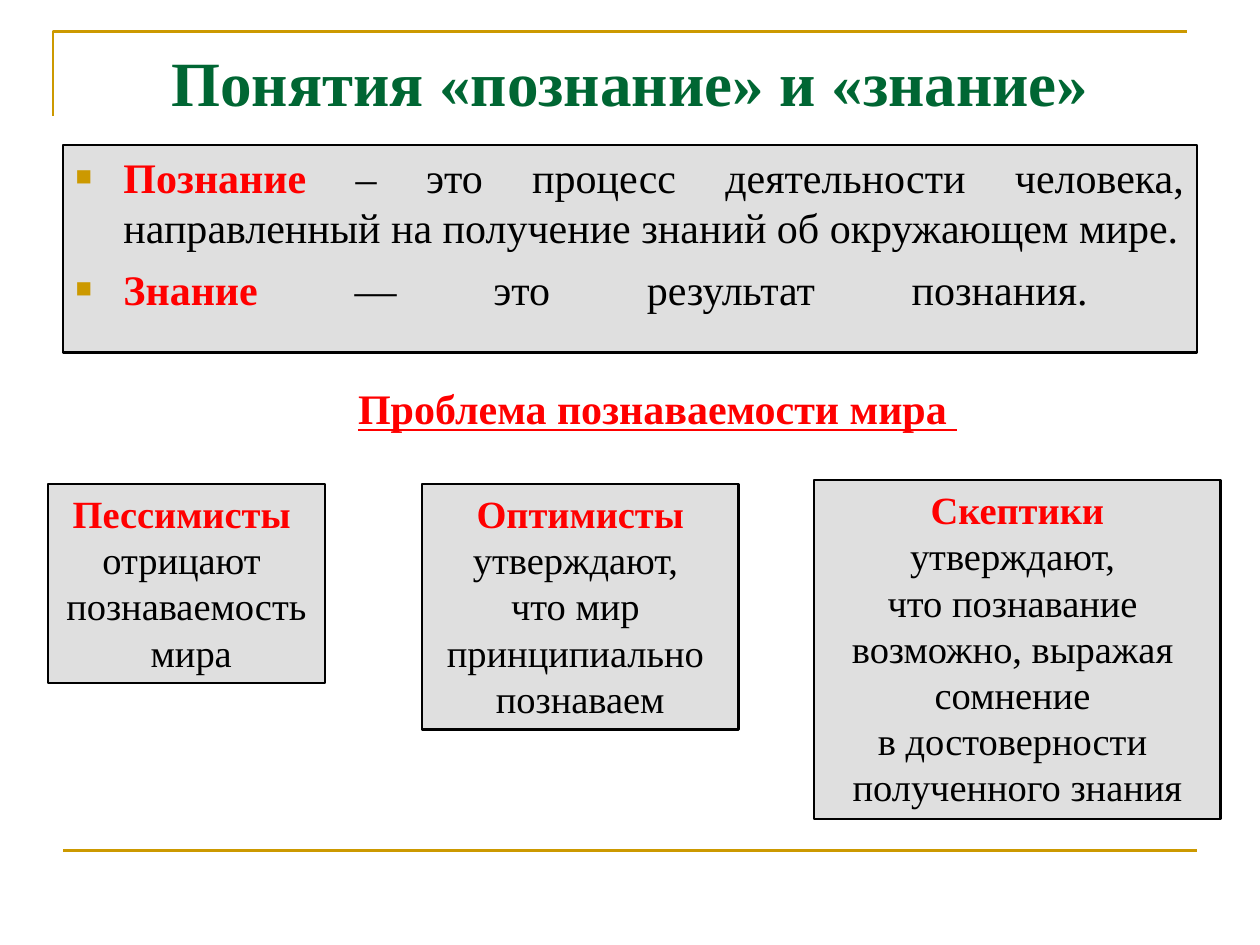
from dataclasses import dataclass

from lxml import etree
from pptx import Presentation
from pptx import util as u
from pptx.dml.color import RGBColor
from pptx.enum import shapes, text
from pptx.oxml import ns


@dataclass(frozen=True)
class Theme:
    font: str = "Times New Roman"
    gold: str = "CC9900"
    green: str = "006633"
    red: str = "FF0000"
    ink: str = "000000"
    panel: str = "DFDFDF"
    title: int = 36
    body: int = 24
    card: int = 22
    line: float = 1.5


THEME = Theme()
WIDTH, HEIGHT = 10, 7.5
MARGIN = WIDTH * 0.05
CONTENT = WIDTH - 2 * MARGIN
CARD_ROW, CARD_PADDING = 0.37, 0.1

TITLE = " Понятия «познание» и «знание» "
DEFINITIONS = [
    ("Познание", " – это процесс деятельности человека, направленный на получение знаний об окружающем мире.", False),
    ("Знание", " — это результат познания. ", True),
]
HEADING = "Проблема познаваемости мира "
CARDS = [
    (0.38, 3.84, 2.2, ["Пессимисты ", "отрицают ", "познаваемость", " мира"]),
    (3.35, 3.84, 2.51, ["Оптимисты", "утверждают, ", "что мир ", "принципиально ", "познаваем"]),
    (6.46, 3.81, 3.23, ["Скептики", "утверждают, ", "что познавание ", "возможно, выражая ",
                        "сомнение ", "в достоверности ", "полученного знания"]),
]


def color(value):
    return RGBColor.from_string(value)


def inches(*values):
    return [u.Inches(value) for value in values]


def style(span, size, tint, bold=False, underline=None):
    span.font.name = THEME.font
    span.font.size = u.Pt(size)
    span.font.color.rgb = color(tint)
    span.font.bold = bold
    span.font.underline = underline


def place(shape, left, top, width, height):
    shape.left, shape.top, shape.width, shape.height = inches(left, top, width, height)


def prepare(shape, anchor=text.MSO_ANCHOR.TOP):
    frame = shape.text_frame
    frame.word_wrap = True
    frame.auto_size = text.MSO_AUTO_SIZE.NONE
    frame.vertical_anchor = anchor
    return frame


def outline(shape, tint):
    shape.line.color.rgb = color(tint)
    shape.line.width = u.Pt(THEME.line)


def panel(shape):
    shape.fill.solid()
    shape.fill.fore_color.rgb = color(THEME.panel)
    outline(shape, THEME.ink)
    shape.shadow.inherit = False


def square_bullet(para):
    props = para._p.get_or_add_pPr()
    props.set("marL", str(u.Inches(0.38)))
    props.set("indent", str(u.Inches(-0.38)))
    tint = etree.SubElement(props, ns.qn("a:buClr"))
    etree.SubElement(tint, ns.qn("a:srgbClr"), val=THEME.gold)
    etree.SubElement(props, ns.qn("a:buSzPct"), val="65000")
    etree.SubElement(props, ns.qn("a:buChar"), char="■")


def add_frame(page):
    left, top = 0.42, 0.25
    builder = page.shapes.build_freeform(*inches(left, top + 0.67))
    builder.add_line_segments([inches(left, top), inches(left + CONTENT, top)], close=False)
    corner = builder.convert_to_shape()
    corner.fill.background()
    corner.shadow.inherit = False
    outline(corner, THEME.gold)
    base = HEIGHT * 0.9
    rule = page.shapes.add_connector(
        shapes.MSO_CONNECTOR.STRAIGHT, *inches(MARGIN, base, WIDTH - MARGIN, base))
    outline(rule, THEME.gold)
    etree.SubElement(rule._element.spPr, ns.qn("a:effectLst"))


def add_title(page):
    title = page.shapes.title
    place(title, MARGIN, 0.3, CONTENT, 0.69)
    para = prepare(title, text.MSO_ANCHOR.MIDDLE).paragraphs[0]
    para.text = TITLE
    para.alignment = text.PP_ALIGN.CENTER
    style(para.runs[0], THEME.title, THEME.green, bold=True)


def add_definitions(page):
    body = page.placeholders[1]
    place(body, MARGIN, 1.15, CONTENT, 1.65)
    panel(body)
    frame = prepare(body)
    for index, (term, meaning, breaks) in enumerate(DEFINITIONS):
        para = frame.add_paragraph() if index else frame.paragraphs[0]
        para.alignment = text.PP_ALIGN.JUSTIFY
        square_bullet(para)
        for words, tint, bold in ((term, THEME.red, True), (meaning, THEME.ink, False)):
            span = para.add_run()
            span.text = words
            style(span, THEME.body, tint, bold)
        if breaks:
            para.add_line_break()


def add_heading(page):
    box = page.shapes.add_textbox(*inches(2.58, 2.99, 5.28, 0.51))
    para = prepare(box).paragraphs[0]
    para.text = HEADING
    para.alignment = text.PP_ALIGN.CENTER
    style(para.runs[0], THEME.body, THEME.red, bold=True, underline=True)


def add_card(page, left, top, width, lines):
    height = len(lines) * CARD_ROW + CARD_PADDING
    card = page.shapes.add_shape(
        shapes.MSO_SHAPE.RECTANGLE, *inches(left, top, width, height))
    panel(card)
    frame = prepare(card)
    frame.text = "\n".join(lines)
    for index, para in enumerate(frame.paragraphs):
        para.alignment = text.PP_ALIGN.CENTER
        tint = THEME.ink if index else THEME.red
        style(para.runs[0], THEME.card, tint, bold=index == 0)


def main():
    deck = Presentation()
    deck.slide_width, deck.slide_height = inches(WIDTH, HEIGHT)
    page = deck.slides.add_slide(deck.slide_layouts[1])
    add_frame(page)
    add_title(page)
    add_definitions(page)
    add_heading(page)
    for card in CARDS:
        add_card(page, *card)
    deck.save("out.pptx")


if __name__ == "__main__":
    main()
